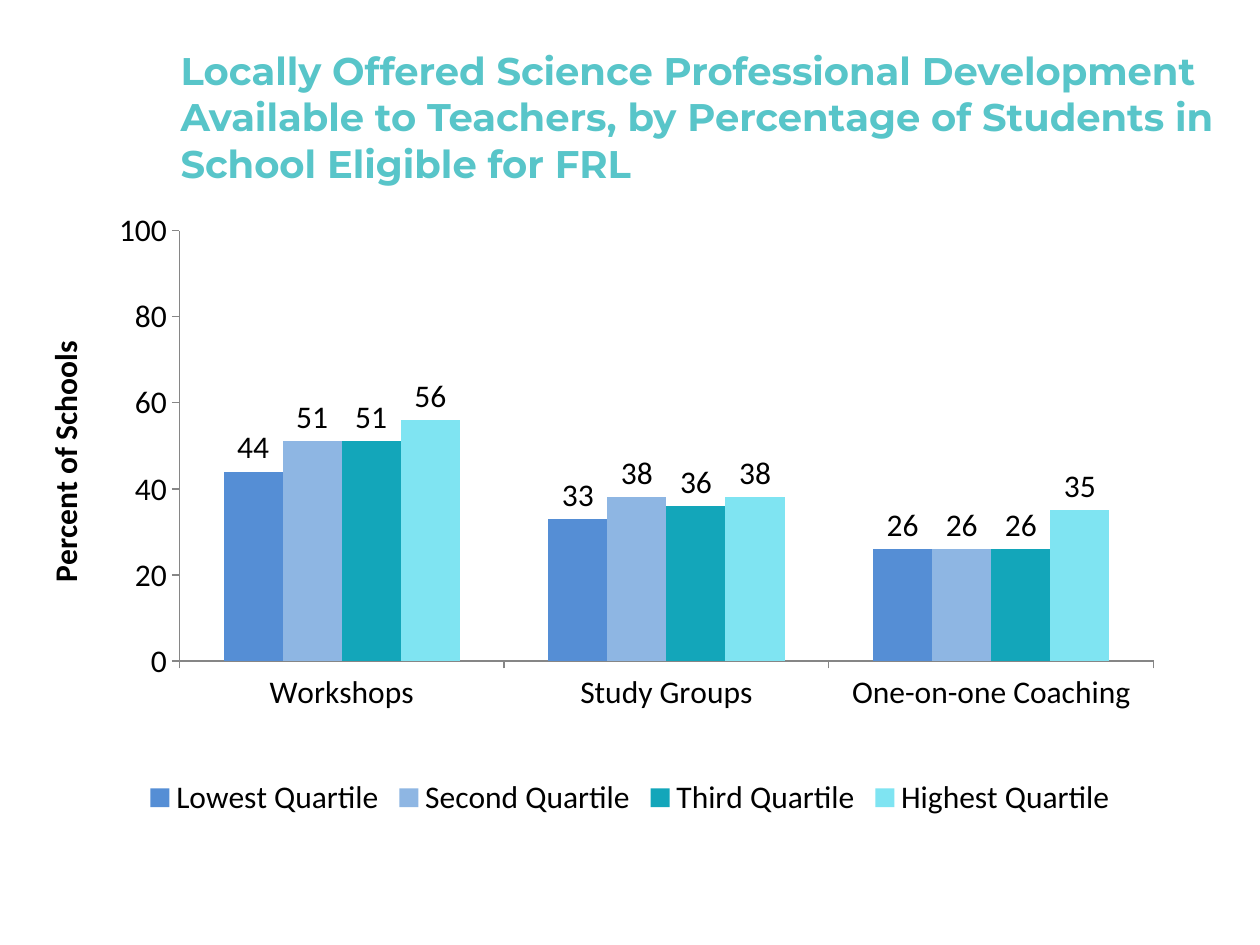
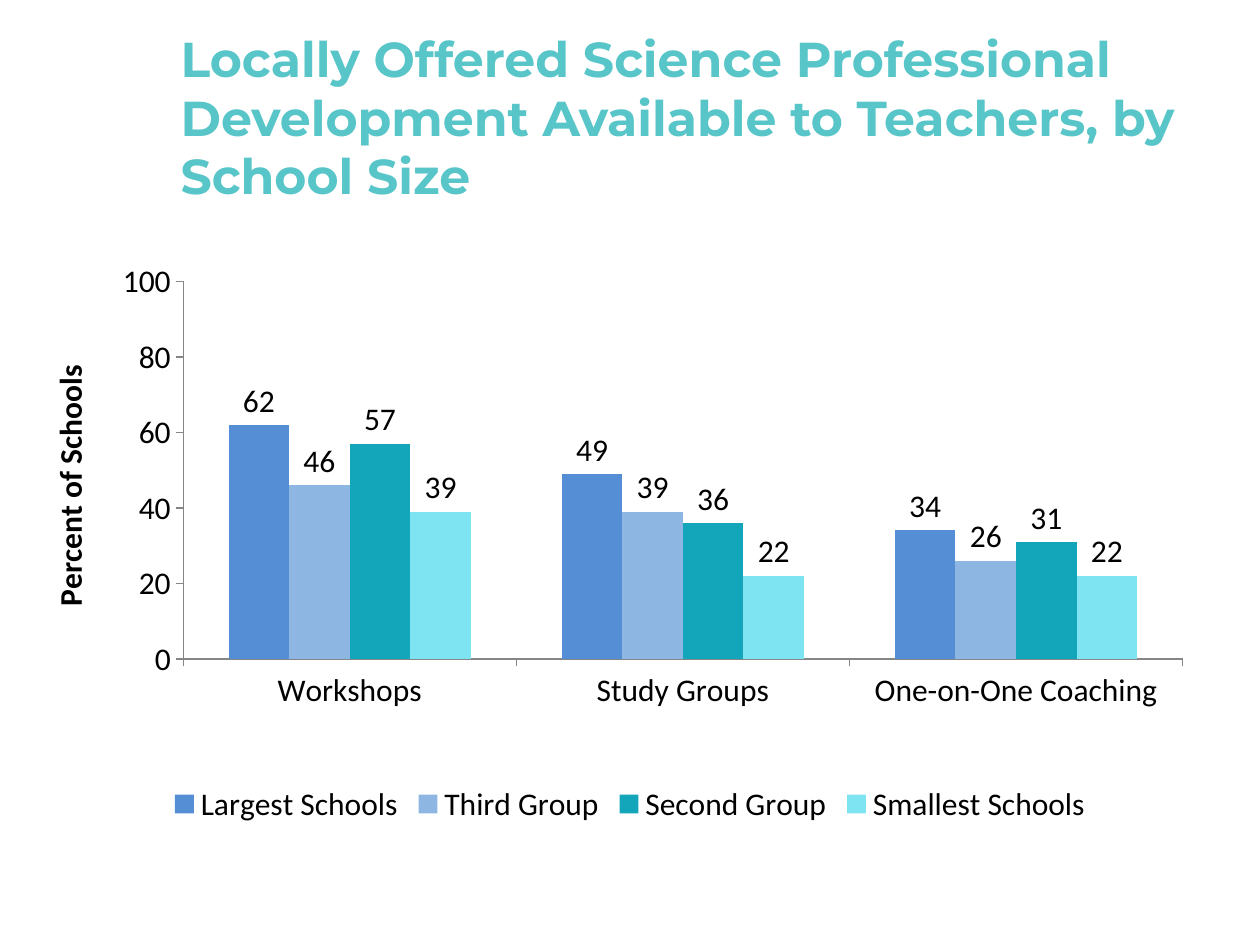
from lxml import etree
from pptx import Presentation
from pptx.chart.data import CategoryChartData
from pptx.dml.color import RGBColor
from pptx.enum.chart import XL_CHART_TYPE, XL_LABEL_POSITION, XL_LEGEND_POSITION, XL_TICK_MARK
from pptx.enum.text import MSO_ANCHOR, MSO_AUTO_SIZE, PP_ALIGN
from pptx.oxml.ns import qn
from pptx.util import Pt

CLUSTERED = XL_CHART_TYPE.COLUMN_CLUSTERED
OUTSIDE_END = XL_LABEL_POSITION.OUTSIDE_END
BOTTOM = XL_LEGEND_POSITION.BOTTOM
TICK_OUT, TICK_NONE = XL_TICK_MARK.OUTSIDE, XL_TICK_MARK.NONE

TEAL = RGBColor(0x58, 0xC5, 0xC9)
BLACK = RGBColor(0, 0, 0)
AXIS_GREY = RGBColor(0x86, 0x86, 0x86)
GROUP_COLOURS = [
    RGBColor(0x55, 0x8E, 0xD5),
    RGBColor(0x8E, 0xB6, 0xE3),
    RGBColor(0x13, 0xA6, 0xBA),
    RGBColor(0x7F, 0xE4, 0xF2),
]
TITLE_FONT, CHART_FONT = "Montserrat", "Calibri"
CHART_SIZE = Pt(18)
TITLE_LEFT, TITLE_TOP, TITLE_HEIGHT = 96, 21.6, 90
AXIS_TITLE = "Percent of Schools"

# Content: boxes are left, top, width, height in points; plot areas are shares of the chart
SLIDES = [
    {
        "title": "Locally Offered Science Professional Development Available to Teachers, "
                 "by Percentage of Students in School Eligible for FRL",
        "title_size": 22,
        "title_width": 618,
        "chart_box": (12, 114, 696, 356.4),
        "plot_area": (0.13, 0.05, 0.8, 0.69),
        "activities": ["Workshops", "Study Groups", "One-on-one Coaching"],
        "groups": {
            "Lowest Quartile": (44, 33, 26),
            "Second Quartile": (51, 38, 26),
            "Third Quartile": (51, 36, 26),
            "Highest Quartile": (56, 38, 35),
        },
    },
    {
        "title": "Locally Offered Science Professional Development Available to Teachers, "
                 "by School Size",
        "title_size": 28,
        "title_width": 588,
        "chart_box": (24, 126, 672, 348),
        "plot_area": (0.12, 0.1, 0.85, 0.62),
        "activities": ["Workshops", "Study Groups", "One-on-One Coaching"],
        "groups": {
            "Largest Schools": (62, 49, 34),
            "Third Group": (46, 39, 26),
            "Second Group": (57, 36, 31),
            "Smallest Schools": (39, 22, 22),
        },
    },
]


def set_title(slide, text, size, width):
    title = slide.shapes.title
    title.left, title.top = Pt(TITLE_LEFT), Pt(TITLE_TOP)
    title.width, title.height = Pt(width), Pt(TITLE_HEIGHT)
    frame = title.text_frame
    frame.text = text
    frame.word_wrap = True
    frame.auto_size = MSO_AUTO_SIZE.NONE
    frame.vertical_anchor = MSO_ANCHOR.MIDDLE
    paragraph = frame.paragraphs[0]
    paragraph.alignment = PP_ALIGN.LEFT
    font = paragraph.font
    font.name, font.size, font.bold = TITLE_FONT, Pt(size), True
    font.color.rgb = TEAL


def place_plot_area(chart, shares):
    """Fix the inner plot area as shares of the chart's width and height."""
    area = chart.element.find(".//" + qn("c:plotArea"))
    for old_layout in area.findall(qn("c:layout")):
        area.remove(old_layout)
    layout = etree.Element(qn("c:layout"))
    manual = etree.SubElement(layout, qn("c:manualLayout"))
    settings = [("layoutTarget", "inner"), ("xMode", "edge"), ("yMode", "edge")]
    for tag, value in settings + list(zip("xywh", shares)):
        etree.SubElement(manual, qn("c:" + tag)).set("val", str(value))
    area.insert(0, layout)


def add_group_chart(slide, box, plot_area, activities, groups):
    data = CategoryChartData(number_format="0")
    data.categories = activities
    for group, percents in groups.items():
        data.add_series(group, percents)
    chart = slide.shapes.add_chart(CLUSTERED, *map(Pt, box), data).chart
    chart.has_title = False
    chart.font.name, chart.font.size = CHART_FONT, CHART_SIZE
    chart.font.color.rgb = BLACK

    # Columns and their labels
    plot = chart.plots[0]
    plot.gap_width, plot.overlap, plot.vary_by_categories = 150, 0, False
    for series, colour in zip(plot.series, GROUP_COLOURS):
        series.format.fill.solid()
        series.format.fill.fore_color.rgb = colour
    plot.has_data_labels = True
    labels = plot.data_labels
    labels.show_value, labels.position = True, OUTSIDE_END
    labels.font.size = CHART_SIZE

    # Axes
    for axis in (chart.category_axis, chart.value_axis):
        axis.has_major_gridlines = False
        axis.major_tick_mark, axis.minor_tick_mark = TICK_OUT, TICK_NONE
        axis.format.line.color.rgb = AXIS_GREY
        axis.format.line.width = Pt(0.75)
    percent_axis = chart.value_axis
    percent_axis.minimum_scale, percent_axis.maximum_scale = 0, 100
    percent_axis.major_unit = 20
    heading = percent_axis.axis_title.text_frame
    heading.text = AXIS_TITLE
    font = heading.paragraphs[0].font
    font.name, font.size, font.bold = CHART_FONT, CHART_SIZE, True
    font.color.rgb = BLACK

    # Legend and plot position
    chart.has_legend = True
    chart.legend.position = BOTTOM
    chart.legend.include_in_layout = False
    place_plot_area(chart, plot_area)


def main():
    deck = Presentation()
    deck.slide_width, deck.slide_height = Pt(720), Pt(540)
    title_only = deck.slide_layouts[5]
    for content in SLIDES:
        slide = deck.slides.add_slide(title_only)
        set_title(slide, content["title"], content["title_size"], content["title_width"])
        add_group_chart(slide, content["chart_box"], content["plot_area"],
                        content["activities"], content["groups"])
    deck.save("out.pptx")


if __name__ == "__main__":
    main()
